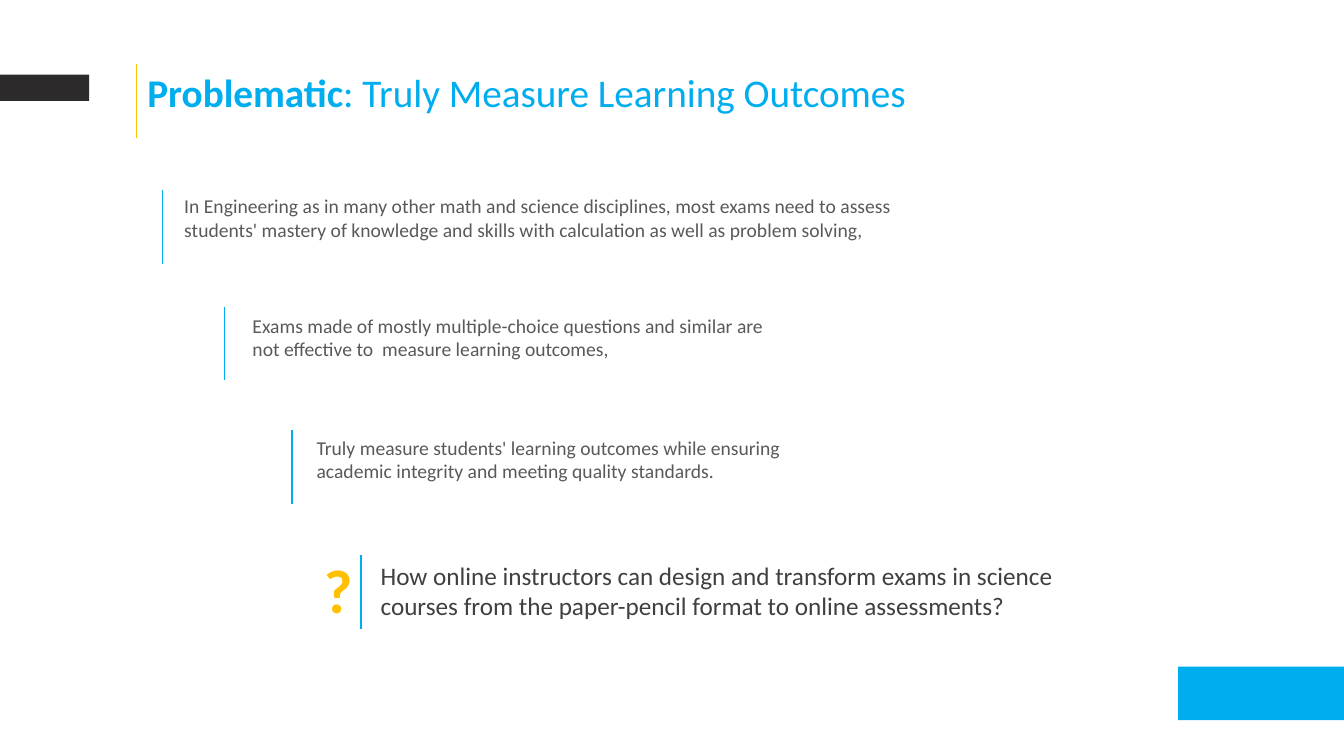
from lxml import etree
from pptx import Presentation
from pptx.dml.color import RGBColor
from pptx.enum.shapes import MSO_CONNECTOR, MSO_SHAPE
from pptx.enum.text import MSO_AUTO_SIZE
from pptx.oxml.ns import qn
from pptx.util import Emu, Pt

EMU_PER_PX = 9525
SLIDE_WIDTH, SLIDE_HEIGHT = 1280, 720
RULE_HEIGHT = 70
FONT_NAME = "Calibri"

BLUE = RGBColor(0x00, 0xAD, 0xEF)
YELLOW = RGBColor(0xFF, 0xC0, 0x00)
CHARCOAL = RGBColor(0x2C, 0x2A, 0x2B)
BODY_GRAY = RGBColor(0x59, 0x59, 0x59)
QUESTION_GRAY = RGBColor(0x40, 0x40, 0x40)

RECTANGLE = MSO_SHAPE.RECTANGLE
STRAIGHT = MSO_CONNECTOR.STRAIGHT
FIT_SHAPE = MSO_AUTO_SIZE.SHAPE_TO_FIT_TEXT

BODY = {"size": Pt(14), "bold": False, "color": BODY_GRAY}
QUESTION = {"size": Pt(18), "bold": False, "color": QUESTION_GRAY}
MARK = {"size": Pt(44), "bold": True, "color": YELLOW}
TITLE_BOLD = {"size": Pt(28), "bold": True, "color": BLUE}
TITLE = TITLE_BOLD | {"bold": False}

# rule left, rule top, text box (left, top, width, height), text, format
STEPS = [
    (155, 181, (166, 180, 717, 55),
     "In Engineering as in many other math and science disciplines, most exams "
     "need to assess students' mastery of knowledge and skills with calculation "
     "as well as problem solving,", BODY),
    (214, 292, (231, 294, 521, 55),
     "Exams made of mostly multiple-choice questions and similar are not "
     "effective to  measure learning outcomes,", BODY),
    (278, 410, (292, 410, 521, 55),
     "Truly measure students' learning outcomes while ensuring academic "
     "integrity and meeting quality standards.", BODY),
    (344, 529, (353, 529, 726, 68),
     "How online instructors can design and transform exams in science courses "
     "from the paper-pencil format to online assessments?", QUESTION),
]


def px(value):
    return Emu(value * EMU_PER_PX)


def add_block(slide, box, color):
    shape = slide.shapes.add_shape(RECTANGLE, *map(px, box))
    shape.shadow.inherit = False
    shape.fill.solid()
    shape.fill.fore_color.rgb = color
    shape.line.fill.background()


def add_rule(slide, left, top, color):
    """Add a thin vertical line of the common height."""
    ends = (left, top, left, top + RULE_HEIGHT)
    connector = slide.shapes.add_connector(STRAIGHT, *map(px, ends))
    connector.line.color.rgb = color
    connector.line.width = Pt(1)
    etree.SubElement(connector._element.spPr, qn("a:effectLst"))


def add_text(slide, box, runs, wrap=True):
    """Add a one-paragraph text box from (text, format) pairs."""
    text_frame = slide.shapes.add_textbox(*map(px, box)).text_frame
    text_frame.word_wrap = wrap
    text_frame.auto_size = FIT_SHAPE
    paragraph = text_frame.paragraphs[0]
    for text, text_format in runs:
        run = paragraph.add_run()
        run.text = text
        run.font.name = FONT_NAME
        for name, value in text_format.items():
            if name == "color":
                run.font.color.rgb = value
            else:
                setattr(run.font, name, value)


def main():
    presentation = Presentation()
    presentation.slide_width = px(SLIDE_WIDTH)
    presentation.slide_height = px(SLIDE_HEIGHT)
    slide = presentation.slides.add_slide(presentation.slide_layouts[6])

    add_block(slide, (1122, 635, 179, 51), BLUE)
    add_block(slide, (-1, 71, 86, 25), CHARCOAL)

    add_rule(slide, 130, 61, YELLOW)
    add_text(slide, (131, 60, 770, 55),
             [("Problematic", TITLE_BOLD),
              (": Truly Measure Learning Outcomes", TITLE)], wrap=False)

    for left, top, box, text, text_format in STEPS:
        add_rule(slide, left, top, BLUE)
        add_text(slide, box, [(text, text_format)])
    add_text(slide, (299, 521, 34, 81), [("?", MARK)])

    presentation.save("out.pptx")


if __name__ == "__main__":
    main()
